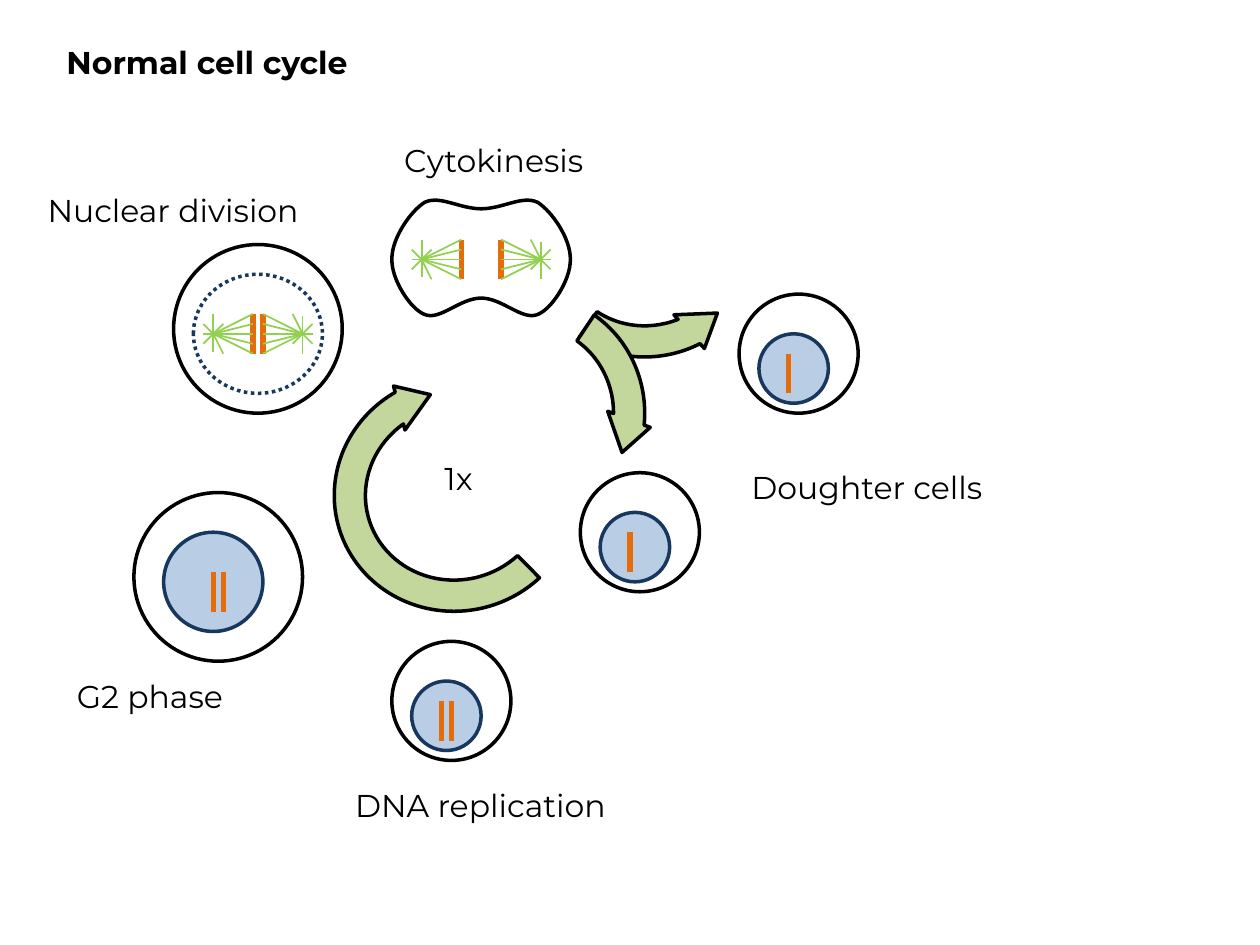
from lxml.etree import SubElement
from pptx import Presentation
from pptx.dml.color import RGBColor
from pptx.enum.dml import MSO_LINE
from pptx.enum.shapes import MSO_CONNECTOR, MSO_SHAPE
from pptx.enum.text import MSO_AUTO_SIZE
from pptx.oxml.ns import qn
from pptx.util import Cm, Pt

BLACK = RGBColor(0x00, 0x00, 0x00)
WHITE = RGBColor(0xFF, 0xFF, 0xFF)
NAVY = RGBColor(0x17, 0x37, 0x5E)
LIGHT_BLUE = RGBColor(0xB9, 0xCD, 0xE5)
ORANGE = RGBColor(0xE4, 0x6C, 0x0A)
SPINDLE_GREEN = RGBColor(0x92, 0xD0, 0x50)
ARROW_GREEN = RGBColor(0xC3, 0xD6, 0x9B)

# All lengths are centimetres.
CHROMOSOME_LENGTH = 0.8
CHROMOSOME_GAP = 0.2
FIBRE_LENGTH = 0.8
FIBRE_ENDS = [(FIBRE_LENGTH, y) for y in (0, 0.2, -0.2, 0.4, -0.4)]
RAY_ENDS = [(0, 0.36), (-0.2, 0), (0.2, 0.4), (-0.2, 0.2),
            (-0.2, -0.2), (0, -0.4), (0.2, -0.2)]

# Left half of the pinched cell: start point, then two Bezier segments each.
PINCHED_WIDTH = 3.6
UPPER_LEFT = [(0, 1.3), (0, 0.86), (0.38, 0.33), (0.66, 0.15),
              (0.97, 0), (1.37, 0.28), (1.8, 0.28)]
LOWER_LEFT = [(1.8, 2.08), (1.37, 2.08), (0.97, 2.54), (0.66, 2.41),
              (0.38, 2.3), (0, 1.73), (0, 1.3)]


def style_shape(shape, fill, line, dash=None):
    shape.shadow.inherit = False
    if fill is None:
        shape.fill.background()
    else:
        shape.fill.solid()
        shape.fill.fore_color.rgb = fill
    shape.line.color.rgb = line
    shape.line.width = Pt(2)
    if dash is not None:
        shape.line.dash_style = dash


def add_ellipse(slide, left, top, width, height, fill=WHITE, line=BLACK, dash=None):
    ellipse = slide.shapes.add_shape(
        MSO_SHAPE.OVAL, Cm(left), Cm(top), Cm(width), Cm(height))
    style_shape(ellipse, fill, line, dash)


def add_line(slide, start, end, color, width):
    connector = slide.shapes.add_connector(
        MSO_CONNECTOR.STRAIGHT, *(Cm(value) for value in (*start, *end)))
    connector.line.color.rgb = color
    connector.line.width = Pt(width)
    SubElement(connector._element.spPr, qn("a:effectLst"))


def add_chromosome(slide, x, top):
    add_line(slide, (x, top), (x, top + CHROMOSOME_LENGTH), ORANGE, 3)


def add_text(slide, text, left, top, width, size=18, bold=False):
    box = slide.shapes.add_textbox(Cm(left), Cm(top), Cm(width), Cm(1.03))
    frame = box.text_frame
    frame.word_wrap = False
    frame.auto_size = MSO_AUTO_SIZE.SHAPE_TO_FIT_TEXT
    run = frame.paragraphs[0].add_run()
    run.text = text
    run.font.name = "Montserrat"
    run.font.size = Pt(size)
    run.font.bold = bold
    run.font.color.rgb = BLACK


def add_interphase_cell(slide, left, top, size=2.4, nucleus=1.4,
                        nucleus_left=0.4, chromosomes=1):
    add_ellipse(slide, left, top, size, size)
    add_ellipse(slide, left + nucleus_left, top + 0.8, nucleus, nucleus,
                fill=LIGHT_BLUE, line=NAVY)
    first_x = left + nucleus_left + nucleus / 2 - 0.1
    if nucleus > 1.4:
        first_x += 0.1
    chromosome_top = top + 0.1 + nucleus / 2 + 0.4
    if nucleus > 1.4:
        chromosome_top += 0.1
    for index in range(chromosomes):
        add_chromosome(slide, first_x + index * CHROMOSOME_GAP, chromosome_top)


def add_spindle(slide, left, middle, gap):
    """Two chromosomes a gap apart, each pulled by the aster outside it."""
    right = left + 2 * FIBRE_LENGTH + gap
    for x in (left + FIBRE_LENGTH, right - FIBRE_LENGTH):
        add_chromosome(slide, x, middle - CHROMOSOME_LENGTH / 2)
    for pole, direction in ((left, 1), (right, -1)):
        for dx, dy in FIBRE_ENDS + RAY_ENDS:
            end = (pole + direction * dx, middle + direction * dy)
            add_line(slide, (pole, middle), end, SPINDLE_GREEN, 1)


def add_dividing_nucleus_cell(slide, left, top):
    add_ellipse(slide, left, top, 3.4, 3.4)
    add_spindle(slide, left + 0.8, top + 1.8, CHROMOSOME_GAP)
    add_ellipse(slide, left + 0.4, top + 0.6, 2.6, 2.4,
                fill=None, line=NAVY, dash=MSO_LINE.ROUND_DOT)


def bezier_points(controls, steps=16):
    """Points along a chain of cubic Bezier segments."""
    points = [controls[0]]
    for first in range(0, len(controls) - 1, 3):
        segment = controls[first:first + 4]
        for step in range(1, steps + 1):
            t = step / steps
            weights = ((1 - t) ** 3, 3 * t * (1 - t) ** 2,
                       3 * t ** 2 * (1 - t), t ** 3)
            points.append(tuple(
                sum(weight * point[axis] for weight, point in zip(weights, segment))
                for axis in (0, 1)))
    return points


def add_pinched_cell(slide, left, top):
    upper, lower = bezier_points(UPPER_LEFT), bezier_points(LOWER_LEFT)
    right_half = [(PINCHED_WIDTH - x, y) for x, y in upper[::-1] + lower[::-1]]
    outline = [(Cm(left + x), Cm(top + y)) for x, y in upper + right_half + lower]
    builder = slide.shapes.build_freeform(*outline[0])
    builder.add_line_segments(outline[1:], close=True)
    style_shape(builder.convert_to_shape(), WHITE, BLACK)
    add_spindle(slide, left + 0.6, top + 1.3, 0.8)


def add_cycle_arrow(slide, left, top, rotation, start=169.815, flip=False):
    arrow = slide.shapes.add_shape(
        MSO_SHAPE.CIRCULAR_ARROW, Cm(left), Cm(top), Cm(5.03), Cm(5.21))
    for index, value in enumerate((0.125, 11.423, 204.577, start, 0.091)):
        arrow.adjustments[index] = value
    arrow.rotation = rotation
    if flip:
        arrow._element.spPr.xfrm.set("flipH", "1")
    style_shape(arrow, ARROW_GREEN, BLACK)


def add_cells(slide):
    add_pinched_cell(slide, 7.9, 3.93)
    add_interphase_cell(slide, 2.7, 9.93, size=3.4, nucleus=2,
                        nucleus_left=0.6, chromosomes=2)
    add_interphase_cell(slide, 7.9, 12.93, chromosomes=2)
    add_interphase_cell(slide, 11.7, 9.53)
    add_interphase_cell(slide, 14.9, 5.93)
    add_dividing_nucleus_cell(slide, 3.5, 4.93)


def add_arrows(slide):
    add_cycle_arrow(slide, 6.68, 7.34, 255.4, start=89.97)
    add_cycle_arrow(slide, 10.57, 2.18, 227.9, flip=True)
    add_cycle_arrow(slide, 8.1, 5.79, 20.7)


def add_labels(slide):
    add_text(slide, "Normal cell cycle", 1.09, 0.74, 6.86, bold=True)
    for text, left, top, width in (
        ("DNA replication", 6.91, 15.72, 6.02),
        ("Doughter cells", 14.9, 9.32, 5.61),
        ("G2 phase", 1.3, 13.52, 3.78),
        ("Nuclear division", 0.71, 3.73, 6.17),
        ("Cytokinesis", 7.9, 2.72, 4.6),
        ("1x", 8.71, 9.12, 1.37),
    ):
        add_text(slide, text, left, top, width)


def main():
    presentation = Presentation()
    presentation.slide_width, presentation.slide_height = Cm(25.4), Cm(19.05)
    slide = presentation.slides.add_slide(presentation.slide_layouts[6])
    add_cells(slide)
    add_arrows(slide)
    add_labels(slide)
    presentation.save("out.pptx")


if __name__ == "__main__":
    main()
